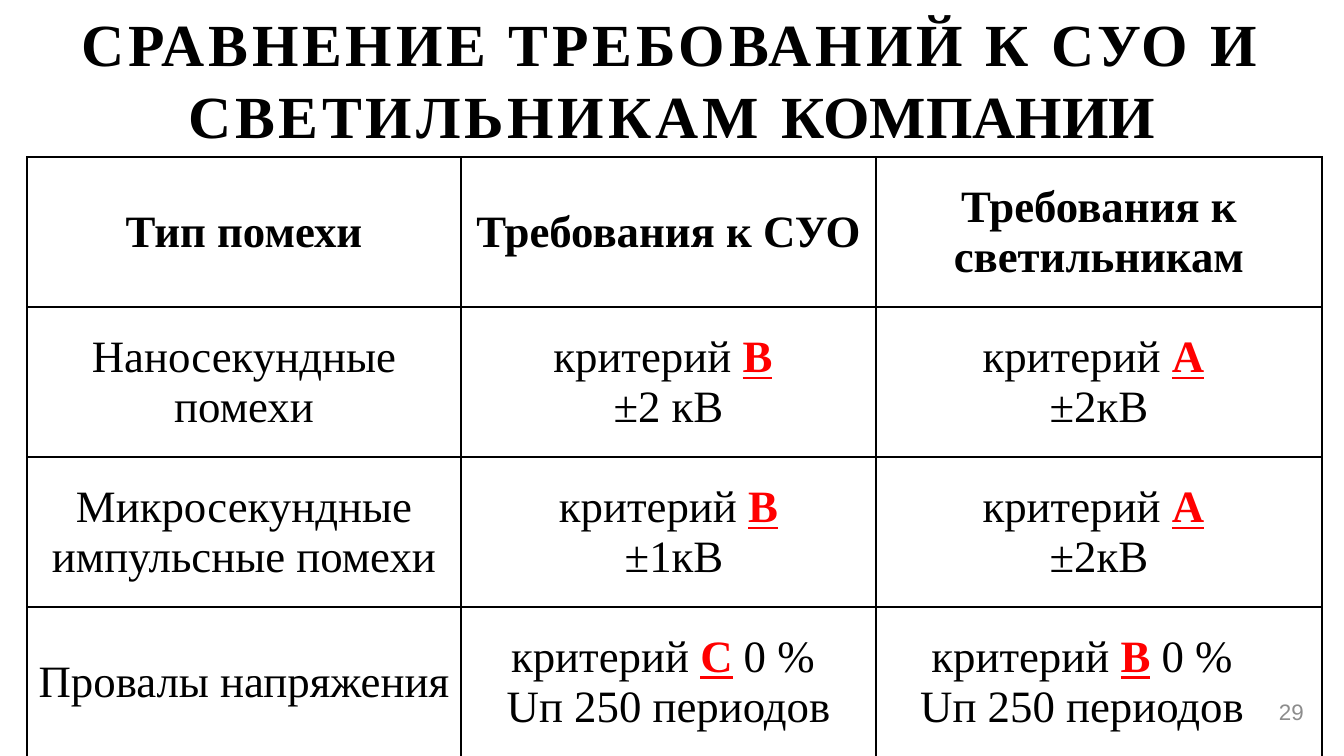
"""Build the slide comparing interference requirements for control systems and luminaires."""
from dataclasses import dataclass

import lxml.etree
import pptx
import pptx.dml.color
import pptx.enum.text
import pptx.oxml.ns
import pptx.util

EMU_PER_PX = 914400 / 134.4
ALIGN = pptx.enum.text.PP_ALIGN
MIDDLE = pptx.enum.text.MSO_ANCHOR.MIDDLE


@dataclass(frozen=True)
class Theme:
    ink: str = "000000"
    accent: str = "FF0000"
    muted: str = "8C8C8C"
    paper: str = "FFFFFF"
    serif: str = "Times New Roman"
    sans: str = "Arial"
    title_size: int = 32
    table_size: int = 24
    number_size: int = 12
    border_width: int = 1


THEME = Theme()


@dataclass(frozen=True)
class Run:
    text: str
    size: int = THEME.table_size
    color: str = THEME.ink
    font: str = THEME.serif
    bold: bool = False
    underline: bool = False
    spacing: int = 0


@dataclass(frozen=True)
class Line:
    runs: tuple[Run, ...]
    align: ALIGN = ALIGN.CENTER
    right_indent: int = 0


@dataclass(frozen=True)
class Box:
    left: int
    top: int
    width: int
    height: int
    line: Line
    anchor: pptx.enum.text.MSO_ANCHOR = MIDDLE


def px(length: int) -> pptx.util.Emu:
    return pptx.util.Emu(round(length * EMU_PER_PX))


def heading(text: str) -> tuple[Line, ...]:
    return (Line((Run(text, bold=True),)),)


def plain(text: str) -> tuple[Line, ...]:
    return (Line((Run(text),)),)


def criterion(grade: str, after: str, level: str, right_indent: int = 0) -> tuple[Line, ...]:
    mark = Run(grade, color=THEME.accent, bold=True, underline=True)
    tail = (Run(after),) if after else ()
    return (Line((Run("критерий "), mark, *tail), right_indent=right_indent), *plain(level))


TITLE = Box(0, 0, 1344, 159, Line((
    Run("СРАВНЕНИЕ ТРЕБОВАНИЙ К СУО И СВЕТИЛЬНИКАМ ", THEME.title_size, bold=True, spacing=200),
    Run("КОМПАНИИ", THEME.title_size, bold=True),
)), pptx.enum.text.MSO_ANCHOR.TOP)
PAGE_NUMBER = Box(1004, 692, 313, 40, Line(
    (Run("29", THEME.number_size, THEME.muted, THEME.sans),), ALIGN.RIGHT))

TABLE_LEFT, TABLE_TOP = 27, 157
COLUMN_WIDTHS = (434, 415, 446)
ROW_HEIGHT = 150
REQUIREMENTS = (
    (heading("Тип помехи"), heading("Требования к СУО"), heading("Требования к светильникам")),
    (plain("Наносекундные помехи"), criterion("B", " ", "±2 кВ"), criterion("А", " ", "±2кВ")),
    (plain("Микросекундные импульсные помехи"), criterion("B", "", " ±1кВ"),
     criterion("А", " ", "±2кВ")),
    (plain("Провалы напряжения"), criterion("C", " 0 % ", "Uп 250 периодов"),
     criterion("B", " 0 %", "Uп 250 периодов", right_indent=34)),
)


def write_lines(frame: pptx.text.text.TextFrame, lines: tuple[Line, ...]) -> None:
    frame.word_wrap = True
    for index, line in enumerate(lines):
        paragraph = frame.paragraphs[0] if index == 0 else frame.add_paragraph()
        paragraph.alignment = line.align
        if line.right_indent:
            paragraph._p.get_or_add_pPr().set("marR", str(px(line.right_indent)))
        for part in line.runs:
            run = paragraph.add_run()
            run.text = part.text
            run.font.name = part.font
            run.font.size = pptx.util.Pt(part.size)
            run.font.bold = part.bold
            run.font.underline = part.underline
            run.font.color.rgb = pptx.dml.color.RGBColor.from_string(part.color)
            if part.spacing:
                run._r.get_or_add_rPr().set("spc", str(part.spacing))


def add_box(slide: pptx.slide.Slide, box: Box) -> None:
    label = slide.shapes.add_textbox(px(box.left), px(box.top), px(box.width), px(box.height))
    label.text_frame.vertical_anchor = box.anchor
    write_lines(label.text_frame, (box.line,))


def add_borders(cell: pptx.table._Cell) -> None:
    properties = cell._tc.get_or_add_tcPr()
    qn = pptx.oxml.ns.qn
    for side in ("a:lnL", "a:lnR", "a:lnT", "a:lnB"):
        border = lxml.etree.SubElement(
            properties, qn(side), w=str(pptx.util.Pt(THEME.border_width)))
        fill = lxml.etree.SubElement(border, qn("a:solidFill"))
        lxml.etree.SubElement(fill, qn("a:srgbClr"), val=THEME.ink)


def add_requirements(slide: pptx.slide.Slide) -> None:
    table = slide.shapes.add_table(
        len(REQUIREMENTS), len(COLUMN_WIDTHS), px(TABLE_LEFT), px(TABLE_TOP),
        px(sum(COLUMN_WIDTHS)), px(ROW_HEIGHT * len(REQUIREMENTS))).table
    table.first_row = table.horz_banding = False
    for column, width in zip(table.columns, COLUMN_WIDTHS):
        column.width = px(width)
    for row_index, requirement in enumerate(REQUIREMENTS):
        table.rows[row_index].height = px(ROW_HEIGHT)
        for column_index, lines in enumerate(requirement):
            cell = table.cell(row_index, column_index)
            cell.margin_left = cell.margin_right = cell.margin_top = px(1)
            cell.margin_bottom = 0
            cell.vertical_anchor = MIDDLE
            add_borders(cell)
            cell.fill.solid()
            cell.fill.fore_color.rgb = pptx.dml.color.RGBColor.from_string(THEME.paper)
            write_lines(cell.text_frame, lines)


def main() -> None:
    presentation = pptx.Presentation()
    presentation.slide_width, presentation.slide_height = px(1344), px(756)
    slide = presentation.slides.add_slide(presentation.slide_layouts[6])
    add_box(slide, TITLE)
    add_requirements(slide)
    add_box(slide, PAGE_NUMBER)
    presentation.save("out.pptx")


if __name__ == "__main__":
    main()
